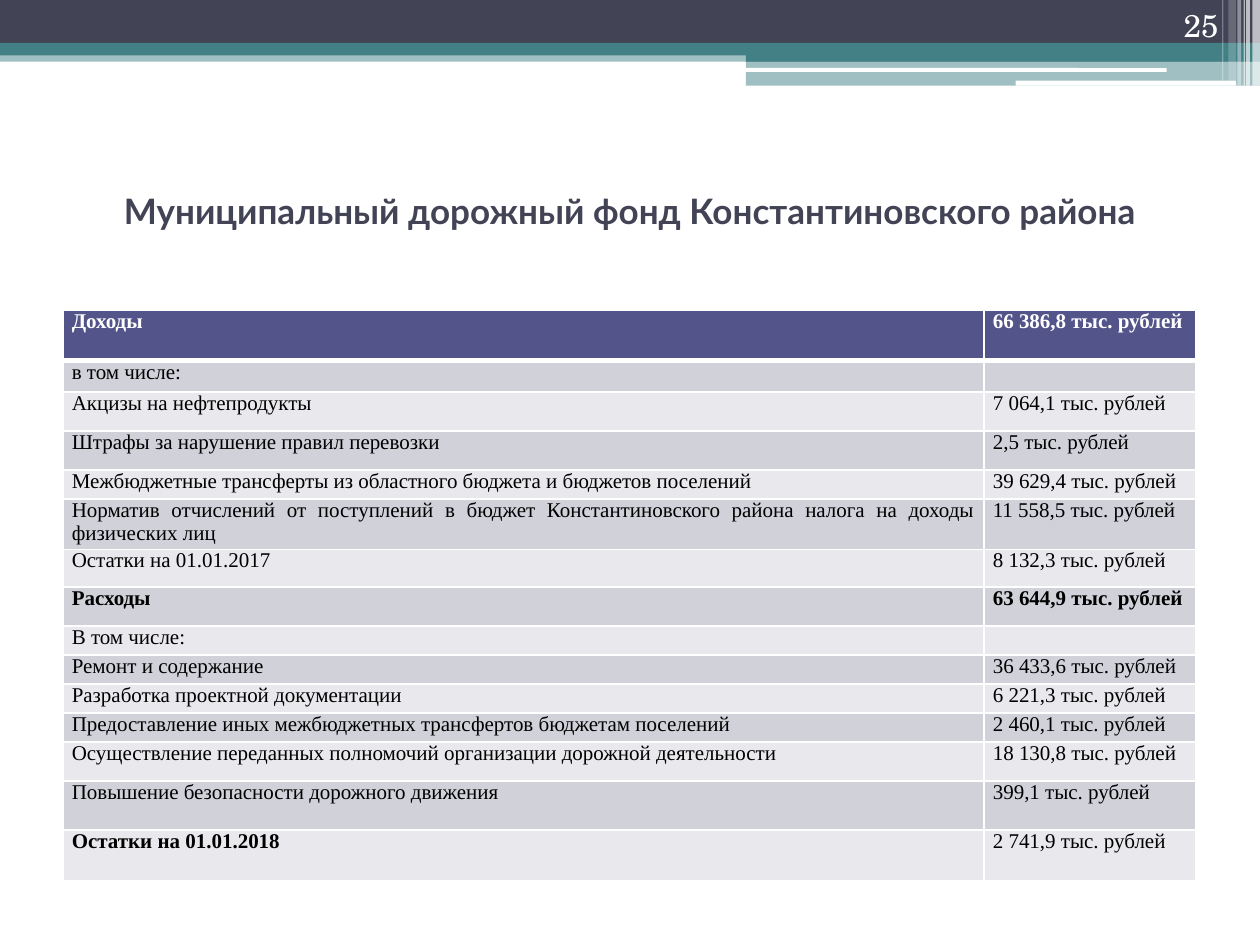
from typing import NamedTuple

from lxml.etree import SubElement
from pptx import Presentation
from pptx.dml.color import RGBColor
from pptx.enum.shapes import MSO_SHAPE as Shape
from pptx.enum.text import MSO_ANCHOR as Anchor, PP_ALIGN as Align
from pptx.oxml.ns import qn
from pptx.util import Inches, Pt

WHITE = RGBColor(0xFF, 0xFF, 0xFF)
BLACK = RGBColor(0, 0, 0)
NAVY = RGBColor(0x42, 0x44, 0x56)
TEAL = RGBColor(0x43, 0x80, 0x86)
HEADER = RGBColor(0x53, 0x54, 0x8A)
STRIPES = (RGBColor(0xE9, 0xE9, 0xED), RGBColor(0xD1, 0xD1, 0xDA))
UNIT = "тыс. рублей"
TABLE_FONT = "Times New Roman"


class Band(NamedTuple):
    left: float
    top: float
    width: float
    height: float
    color: RGBColor
    opacity: int = 100
    preset: Shape = Shape.RECTANGLE


class Row(NamedTuple):
    label: str
    amount: str
    height: float
    bold_label: bool = False
    bold_amount: bool = False


BANDS = [
    Band(0, 0.4, 10, 0.09, TEAL, 50),
    Band(0, 0, 10, 0.34, NAVY),
    Band(0, 0.34, 10, 0.1, TEAL),
    Band(5.92, 0.39, 4.08, 0.1, TEAL),
    Band(5.92, 0.48, 4.08, 0.2, TEAL, 50),
    Band(5.91, 0.54, 3.35, 0.03, WHITE, preset=Shape.ROUNDED_RECTANGLE),
    Band(8.06, 0.64, 1.75, 0.04, WHITE, preset=Shape.ROUNDED_RECTANGLE),
    Band(9.94, 0, 0.06, 0.68, WHITE, 65),
    Band(9.89, 0, 0.03, 0.68, WHITE, 65),
    Band(9.87, 0, 0.01, 0.68, WHITE, 60),
    Band(9.82, 0, 0.03, 0.68, WHITE, 40),
    Band(9.75, 0, 0.06, 0.64, WHITE, 20),
    Band(9.7, 0, 0.01, 0.64, WHITE, 30),
]

ROWS = [
    Row("Доходы", "66 386,8", 0.4, True, True),
    Row("в том числе:", "", 0.25),
    Row("Акцизы на нефтепродукты", "7 064,1", 0.31),
    Row("Штрафы за нарушение правил перевозки", "2,5", 0.31),
    Row("Межбюджетные трансферты из областного бюджета и бюджетов поселений",
        "39 629,4", 0.23),
    Row("Норматив отчислений от поступлений в бюджет Константиновского района "
        "налога на доходы физических лиц", "11 558,5", 0.4),
    Row("Остатки на 01.01.2017", "8 132,3", 0.3),
    Row("Расходы", "63 644,9", 0.31, True, True),
    Row("В том числе:", "", 0.23),
    Row("Ремонт и содержание", "36 433,6", 0.23),
    Row("Разработка проектной документации", "6 221,3", 0.23),
    Row("Предоставление иных межбюджетных трансфертов бюджетам поселений",
        "2 460,1", 0.23),
    Row("Осуществление переданных полномочий организации дорожной деятельности",
        "18 130,8", 0.31),
    Row("Повышение безопасности дорожного движения", "399,1", 0.39),
    Row("Остатки на 01.01.2018", "2 741,9", 0.4, True),
]
COLUMN_WIDTHS = (7.31, 1.68)


def write(frame, text: str, *, font: str, size: float, color: RGBColor,
          bold: bool = False, align: Align = Align.LEFT) -> None:
    paragraph = frame.paragraphs[0]
    paragraph.alignment = align
    if not text:
        # An empty cell still needs the text size, or its row grows.
        paragraph._p.get_or_add_endParaRPr().set("sz", str(int(size * 100)))
        return
    run = paragraph.add_run()
    run.text = text
    run.font.name = font
    run.font.size = Pt(size)
    run.font.bold = bold
    run.font.color.rgb = color


def draw_band(slide, band: Band) -> None:
    shape = slide.shapes.add_shape(
        band.preset, *(Inches(length) for length in band[:4]))
    shape.shadow.inherit = False
    shape.line.fill.background()
    shape.fill.solid()
    shape.fill.fore_color.rgb = band.color
    if band.opacity < 100:
        color = shape._element.spPr.find(f"{qn('a:solidFill')}/{qn('a:srgbClr')}")
        SubElement(color, qn("a:alpha"), val=str(band.opacity * 1000))


def set_borders(cell, bottom: float) -> None:
    properties = cell._tc.get_or_add_tcPr()
    for position, side in enumerate(("lnL", "lnR", "lnT", "lnB")):
        width = bottom if side == "lnB" else 1
        line = SubElement(properties, qn(f"a:{side}"), w=str(Pt(width)))
        fill = SubElement(line, qn("a:solidFill"))
        SubElement(fill, qn("a:srgbClr"), val=str(WHITE))
        properties.insert(position, line)


def draw_fund_table(slide, rows: list[Row]) -> None:
    table = slide.shapes.add_table(
        len(rows), len(COLUMN_WIDTHS), Inches(0.5), Inches(2.46),
        Inches(sum(COLUMN_WIDTHS)), Inches(sum(row.height for row in rows))).table
    for column, width in zip(table.columns, COLUMN_WIDTHS):
        column.width = Inches(width)
    for index, row in enumerate(rows):
        table.rows[index].height = Inches(row.height)
        is_header = index == 0
        amount = f"{row.amount} {UNIT}" if row.amount else ""
        contents = ((row.label, row.bold_label), (amount, row.bold_amount))
        for cell, (text, bold) in zip(table.rows[index].cells, contents):
            cell.margin_left = cell.margin_right = Inches(0.07)
            cell.margin_top = cell.margin_bottom = 0
            cell.fill.solid()
            cell.fill.fore_color.rgb = HEADER if is_header else STRIPES[index % 2]
            set_borders(cell, bottom=3 if is_header else 1)
            write(cell.text_frame, text, font=TABLE_FONT, size=12, bold=bold,
                  color=WHITE if is_header else BLACK, align=Align.JUSTIFY)


def draw_title(slide, text: str) -> None:
    title = slide.shapes.title
    title.left, title.top = Inches(0.5), Inches(1.25)
    title.width, title.height = Inches(9), Inches(1.17)
    frame = title.text_frame
    frame.vertical_anchor = Anchor.MIDDLE
    frame.margin_bottom = Inches(0.38)
    write(frame, text, font="Lato", size=20, color=NAVY, bold=True,
          align=Align.CENTER)


def draw_page_number(slide, number: str) -> None:
    frame = slide.shapes.add_textbox(
        Inches(8.94), 0, Inches(0.83), Inches(0.4)).text_frame
    frame.word_wrap = True
    frame.vertical_anchor = Anchor.BOTTOM
    write(frame, number, font="TeX Gyre Schola", size=18, color=WHITE,
          align=Align.RIGHT)


def main() -> None:
    deck = Presentation()
    deck.slide_width, deck.slide_height = Inches(10), Inches(7.5)
    slide = deck.slides.add_slide(deck.slide_layouts[5])
    for band in BANDS:
        draw_band(slide, band)
    draw_title(slide, "Муниципальный дорожный фонд Константиновского района")
    draw_fund_table(slide, ROWS)
    draw_page_number(slide, "25")
    deck.save("out.pptx")


if __name__ == "__main__":
    main()
